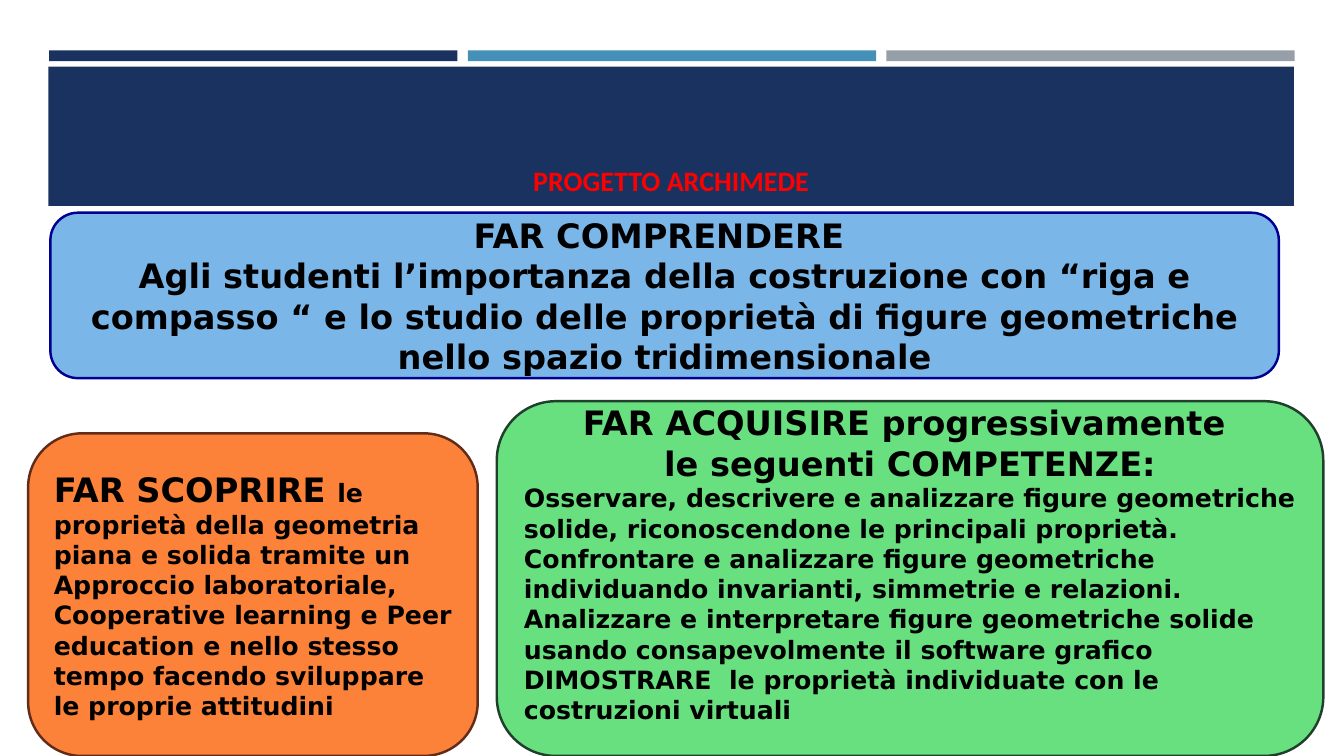
from pptx import Presentation
from pptx.dml.color import RGBColor
from pptx.enum.shapes import MSO_SHAPE
from pptx.enum.text import MSO_ANCHOR, PP_ALIGN
from pptx.util import Cm, Pt

RECTANGLE = MSO_SHAPE.RECTANGLE
ROUNDED = MSO_SHAPE.ROUNDED_RECTANGLE
MIDDLE = MSO_ANCHOR.MIDDLE
BOTTOM = MSO_ANCHOR.BOTTOM
LEFT = PP_ALIGN.LEFT
CENTER = PP_ALIGN.CENTER

NAVY = "1A3260"
BAR_COLORS = (NAVY, "4590B8", "969FA7")
BODY_FONT = "DejaVu Sans"
HEADING, BODY = 24, 18

PURPOSE = [
    (CENTER, [("FAR COMPRENDERE ", HEADING)]),
    (CENTER, [("Agli studenti l’importanza della costruzione con “riga e compasso “ "
               "e lo studio delle proprietà di figure geometriche nello spazio "
               "tridimensionale", HEADING)]),
]
DISCOVERY = [
    (LEFT, [("FAR SCOPRIRE ", HEADING),
            ("le proprietà della geometria piana e solida tramite un "
             "Approccio laboratoriale,", BODY)]),
    (LEFT, [("Cooperative learning e Peer education e nello stesso tempo "
             "facendo sviluppare le proprie attitudini", BODY)]),
]
SKILLS = [
    (CENTER, [("FAR ACQUISIRE progressivamente ", HEADING)]),
    (CENTER, [("le seguenti COMPETENZE:", HEADING)]),
    (LEFT, [("Osservare, descrivere e analizzare figure geometriche solide, "
             "riconoscendone le principali proprietà.", BODY)]),
    (LEFT, [("Confrontare e analizzare figure geometriche individuando "
             "invarianti, simmetrie e relazioni.", BODY)]),
    (LEFT, [("Analizzare e interpretare figure geometriche solide usando "
             "consapevolmente il software grafico", BODY)]),
    (LEFT, [("DIMOSTRARE  le proprietà individuate con le costruzioni virtuali",
             BODY)]),
]


def color(value):
    """Turn a hex string into a colour."""
    return RGBColor.from_string(value)


def add_block(page, kind, left, top, width, height, fill):
    """Add a filled shape without outline or shadow, measured in centimetres."""
    block = page.shapes.add_shape(kind, Cm(left), Cm(top), Cm(width), Cm(height))
    block.shadow.inherit = False
    block.fill.solid()
    block.fill.fore_color.rgb = color(fill)
    block.line.fill.background()
    return block


def write_text(box, paragraphs, font, ink, anchor):
    """Write aligned bold paragraphs made of sized spans."""
    frame = box.text_frame
    frame.word_wrap = True
    frame.vertical_anchor = anchor
    for index, (alignment, spans) in enumerate(paragraphs):
        para = frame.add_paragraph() if index else frame.paragraphs[0]
        para.alignment = alignment
        para.font.name = font
        para.font.bold = True
        para.font.color.rgb = color(ink)
        para.font.size = Pt(spans[0][1])
        for text, size in spans:
            span = para.add_run()
            span.text = text
            if size != spans[0][1]:
                span.font.size = Pt(size)


def add_card(page, left, top, width, height, fill, outline, paragraphs):
    """Add an outlined rounded card with its text."""
    card = add_block(page, ROUNDED, left, top, width, height, fill)
    card.line.color.rgb = color(outline)
    card.line.width = Pt(1.75)
    write_text(card, paragraphs, BODY_FONT, "000000", MIDDLE)
    return card


def add_header(page):
    """Add the three bars, the title band and the title."""
    for column, fill in enumerate(BAR_COLORS):
        add_block(page, RECTANGLE, 1.24 + 10.55 * column, 1.27, 10.29, 0.27, fill)
    add_block(page, RECTANGLE, 1.22, 1.68, 31.39, 3.51, NAVY)
    title = page.shapes.add_textbox(Cm(1.6), Cm(2.03), Cm(30.63), Cm(3.05))
    write_text(title, [(CENTER, [("PROGETTO ARCHIMEDE", 20)])],
               "Calibri", "FF0000", BOTTOM)


def main():
    """Build and save the slide."""
    deck = Presentation()
    deck.slide_width, deck.slide_height = Cm(33.87), Cm(19.05)
    page = deck.slides.add_slide(deck.slide_layouts[6])
    add_header(page)
    add_card(page, 1.27, 5.36, 30.96, 4.17, "7BB6E9", "000090", PURPOSE)
    add_card(page, 0.71, 10.92, 11.33, 8.13, "FD8239", "622C1A", DISCOVERY)
    skills = add_card(page, 12.52, 10.11, 20.83, 8.94, "69E07F", "1F412B", SKILLS)
    skills.text_frame.margin_bottom = Cm(0.89)
    deck.save("out.pptx")


if __name__ == "__main__":
    main()
